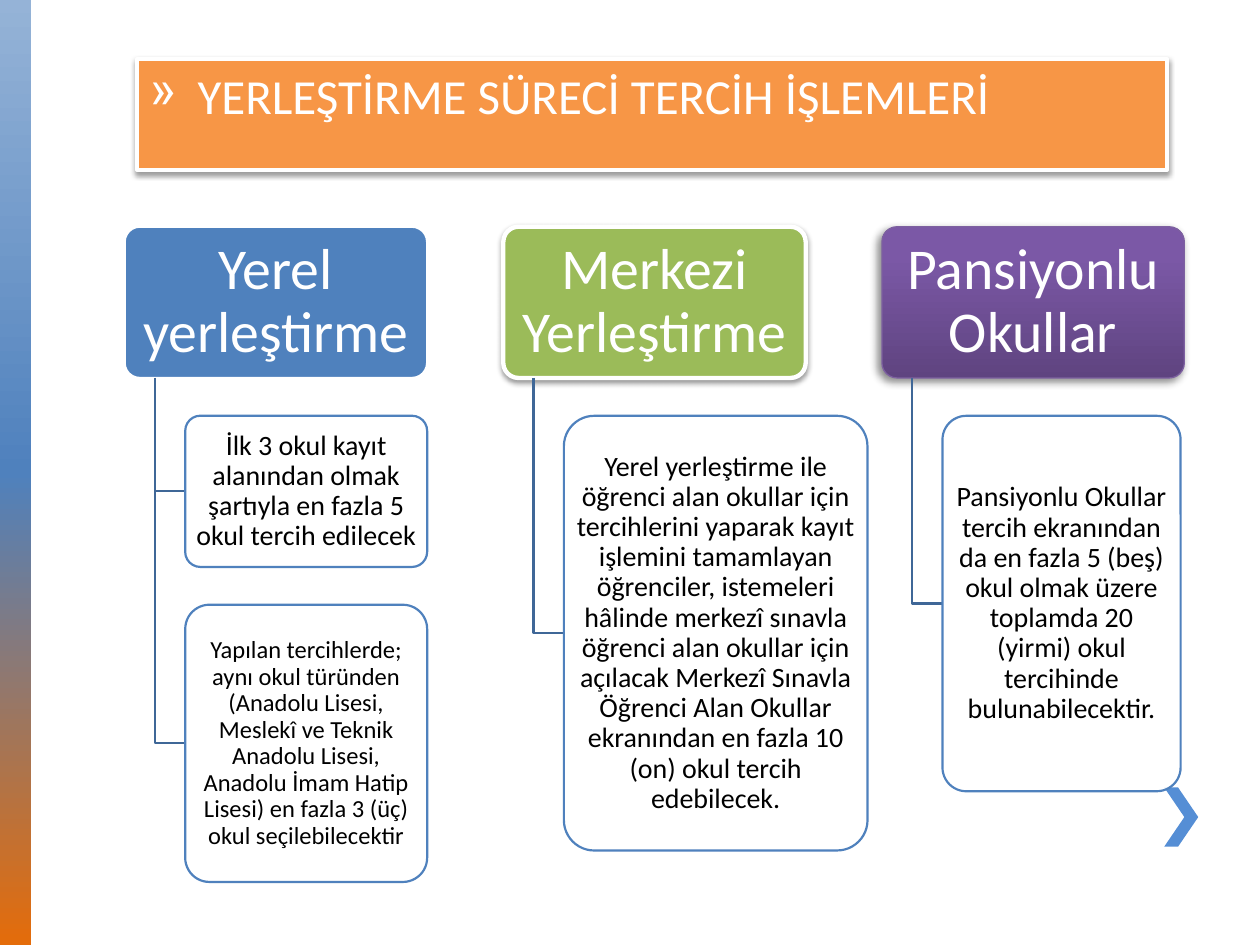
import dataclasses

import lxml.etree
import pptx
import pptx.dml.color
import pptx.enum.shapes
import pptx.enum.text
import pptx.oxml.ns
import pptx.util

SHAPE = pptx.enum.shapes.MSO_SHAPE
ALIGN = pptx.enum.text.PP_ALIGN
ANCHOR = pptx.enum.text.MSO_ANCHOR
qn = pptx.oxml.ns.qn


@dataclasses.dataclass(frozen=True)
class Theme:
    font: str = "Calibri"
    white: str = "FFFFFF"
    black: str = "000000"
    blue: str = "4F81BD"
    green: str = "9BBB59"
    orange: str = "F79646"
    purple_line: str = "7D60A0"
    chevron: str = "558ED5"
    branch: str = "3F6797"
    band: tuple = ((0, "95B3D7"), (50, "4F81BD"), (100, "E46C0A"))
    purple: tuple = ((0, "5F4480"), (80, "7B58A6"), (100, "7C57A8"))
    soft_shadow: tuple = (38, 3.1, 1.6, 90)
    deep_shadow: tuple = (45, 5, 3, 135)
    title: int = 28
    heading: int = 33
    body: int = 16
    small: int = 14


THEME = Theme()


def rgb(value):
    return pptx.dml.color.RGBColor.from_string(value)


def add_node(parent, tag, **attrs):
    return lxml.etree.SubElement(
        parent, qn(tag), {k: str(v) for k, v in attrs.items()})


def write_text(sp, text, size, color, align=ALIGN.CENTER, anchor=ANCHOR.MIDDLE,
               inset=(0.1, 0.05), spacing=None, bullet=None, indent=0.38):
    tf = sp.text_frame
    tf.word_wrap = True
    tf.vertical_anchor = anchor
    tf.margin_left = tf.margin_right = pptx.util.Inches(inset[0])
    tf.margin_top = tf.margin_bottom = pptx.util.Inches(inset[1])
    p = tf.paragraphs[0]
    p.alignment = align
    if spacing:
        p.line_spacing = spacing
    if bullet:
        pPr = p._p.get_or_add_pPr()
        width = pptx.util.Inches(indent)
        pPr.set("marL", str(width))
        pPr.set("indent", str(-width))
        add_node(pPr, "a:buChar", char=bullet)
    r = p.add_run()
    r.text = text
    r.font.name = THEME.font
    r.font.size = pptx.util.Pt(size)
    r.font.color.rgb = rgb(color)


class Deck:
    COLUMNS, ROWS = 100, 75

    def __init__(self, theme, width=10, height=7.5):
        self.theme = theme
        self.prs = pptx.Presentation()
        self.prs.slide_width = pptx.util.Inches(width)
        self.prs.slide_height = pptx.util.Inches(height)
        self.slide = self.prs.slides.add_slide(self.prs.slide_layouts[6])

    def x(self, column):
        return round(self.prs.slide_width * column / self.COLUMNS)

    def y(self, row):
        return round(self.prs.slide_height * row / self.ROWS)

    def paint(self, sp, fill=None, line=None, line_width=1.25, alpha=None,
              angle=270, shadow=None):
        if fill is None:
            sp.fill.background()
        elif isinstance(fill, str):
            sp.fill.solid()
            sp.fill.fore_color.rgb = rgb(fill)
            if alpha:
                clr = sp._element.spPr.find(".//" + qn("a:srgbClr"))
                add_node(clr, "a:alpha", val=alpha * 1000)
        else:
            sp.fill.gradient()
            sp.fill.gradient_angle = angle
            stops = sp._element.spPr.find(".//" + qn("a:gsLst"))
            stops[:] = []
            for pos, color in fill:
                gs = add_node(stops, "a:gs", pos=pos * 1000)
                add_node(gs, "a:srgbClr", val=color)
        if line:
            sp.line.color.rgb = rgb(line)
            sp.line.width = pptx.util.Pt(line_width)
        else:
            sp.line.fill.background()
        sp.shadow.inherit = False
        if shadow:
            opacity, blur, dist, direction = shadow
            effects = sp._element.spPr.find(qn("a:effectLst"))
            outer = add_node(effects, "a:outerShdw",
                             blurRad=pptx.util.Pt(blur), dist=pptx.util.Pt(dist),
                             dir=direction * 60000, rotWithShape=0)
            clr = add_node(outer, "a:srgbClr", val=self.theme.black)
            add_node(clr, "a:alpha", val=opacity * 1000)
        return sp

    def box(self, col, row, width, height, kind=SHAPE.RECTANGLE, **style):
        sp = self.slide.shapes.add_shape(
            kind, self.x(col), self.y(row), self.x(width), self.y(height))
        if kind == SHAPE.ROUNDED_RECTANGLE:
            sp.adjustments[0] = 0.1
        return self.paint(sp, **style)

    def outline(self, points, close=False, **style):
        start, *rest = [(self.x(c), self.y(r)) for c, r in points]
        builder = self.slide.shapes.build_freeform(*start)
        builder.add_line_segments(rest, close=close)
        return self.paint(builder.convert_to_shape(), **style)

    def tree(self, col, row, heading, style, children):
        t = self.theme
        width, height, gap, step = 24, 12, 3, 2.4
        sp = self.box(col, row, width, height, SHAPE.ROUNDED_RECTANGLE, **style)
        write_text(sp, heading, t.heading, t.white, inset=(0.07, 0.05), spacing=0.9)
        trunk, left, bottom = col + step, col + 2 * step, row + height
        top = bottom + gap
        for text, size, child_width, child_height in children:
            middle = top + child_height / 2
            self.outline([(trunk, bottom), (trunk, middle), (left, middle)],
                         line=t.branch)
            sp = self.box(left, top, child_width, child_height,
                          SHAPE.ROUNDED_RECTANGLE, fill=t.white, alpha=90, line=t.blue)
            write_text(sp, text, size, t.black, inset=(0.03, 0.02), spacing=0.9)
            top += child_height + gap


def main():
    t = THEME
    deck = Deck(t)
    deck.box(0, 0, 2.5, deck.ROWS, fill=t.band)
    deck.outline([(93.5, 62.5), (92.4, 62.5), (94, 64.85), (92.4, 67.2),
                  (93.5, 67.2), (95.1, 64.85)], close=True, fill=t.chevron)

    trees = [
        ("Yerel yerleştirme", dict(fill=t.blue, line=t.white), [
            ("İlk 3 okul kayıt alanından olmak şartıyla en fazla 5 okul tercih "
             "edilecek", t.body, 19.2, 12),
            ("Yapılan tercihlerde; aynı okul türünden (Anadolu Lisesi, Meslekî ve "
             "Teknik Anadolu Lisesi, Anadolu İmam Hatip Lisesi) en fazla 3 (üç) "
             "okul seçilebilecektir", t.small, 19.2, 22)]),
        ("Merkezi Yerleştirme",
         dict(fill=t.green, line=t.white, line_width=2.5, shadow=t.soft_shadow), [
            ("Yerel yerleştirme ile öğrenci alan okullar için tercihlerini yaparak "
             "kayıt işlemini tamamlayan öğrenciler, istemeleri hâlinde merkezî "
             "sınavla öğrenci alan okullar için açılacak Merkezî Sınavla Öğrenci "
             "Alan Okullar ekranından en fazla 10 (on) okul tercih edebilecek.",
             t.body, 24.1, 34.5)]),
        ("Pansiyonlu Okullar",
         dict(fill=t.purple, angle=90, line=t.purple_line, line_width=0.75,
              shadow=t.deep_shadow), [
            ("Pansiyonlu Okullar tercih ekranından da en fazla 5 (beş) okul olmak "
             "üzere toplamda 20 (yirmi) okul tercihinde bulunabilecektir.",
             t.body, 18.9, 29.8)]),
    ]
    for i, (heading, style, children) in enumerate(trees):
        deck.tree(9.9 + 30.05 * i, 18, heading, style, children)

    sp = deck.box(10.9, 4.7, 81.7, 8.8, fill=t.orange, line=t.white,
                  line_width=2.5, shadow=t.soft_shadow)
    write_text(sp, "YERLEŞTİRME SÜRECİ TERCİH İŞLEMLERİ", t.title, t.white,
               align=ALIGN.LEFT, anchor=ANCHOR.TOP, bullet="»")
    deck.prs.save("out.pptx")


if __name__ == "__main__":
    main()
